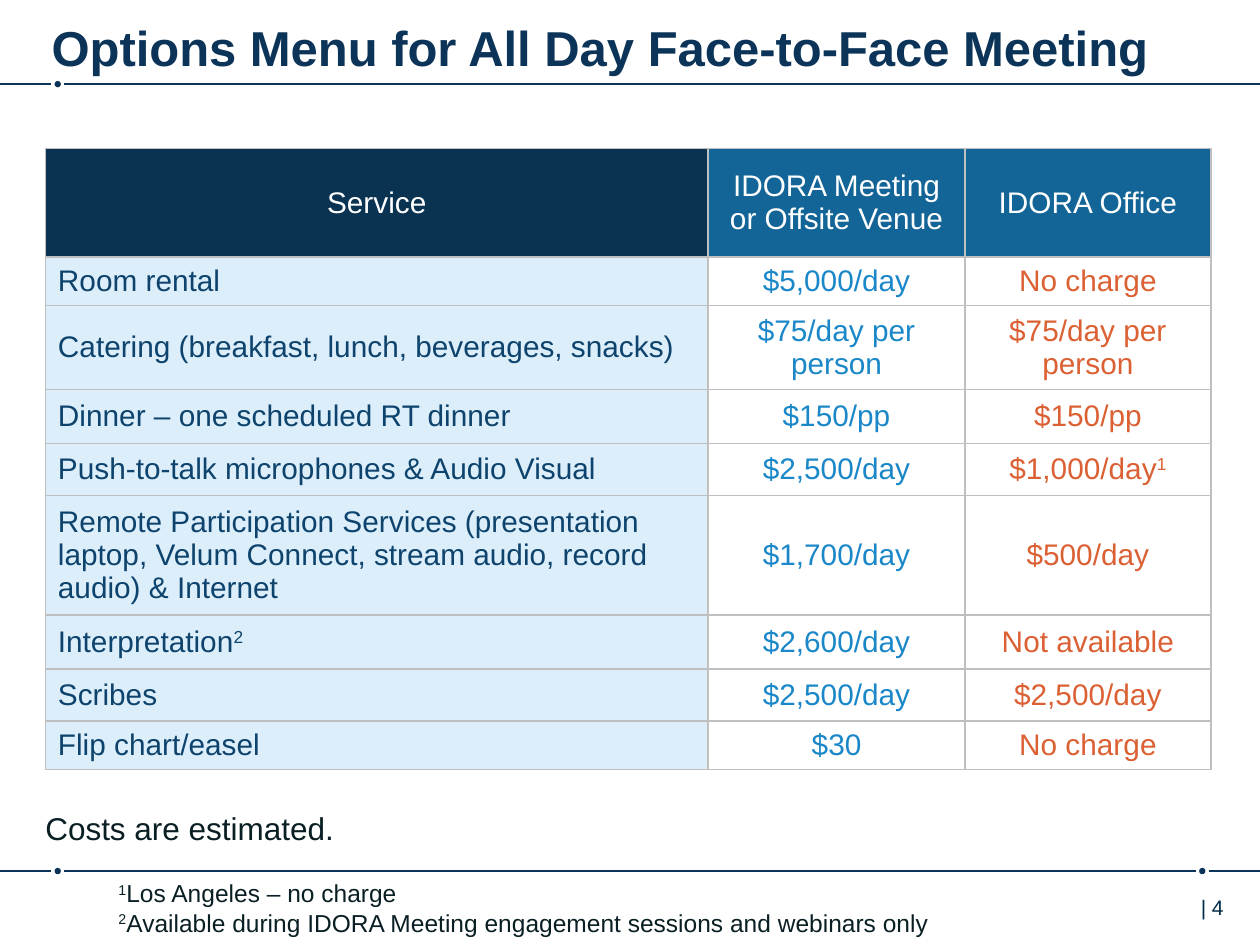
from dataclasses import dataclass

from lxml import etree
from pptx import Presentation, util as u
from pptx.dml.color import RGBColor
from pptx.enum import shapes, text
from pptx.oxml.ns import qn

COLUMNS, ROWS = 100, 75  # slide grid


@dataclass(frozen=True)
class Theme:
    font: str = "Arial"
    navy: str = "0C3458"
    ink: str = "0A1F24"
    number: str = "002B49"
    white: str = "FFFFFF"
    border: str = "BFBFBF"
    header_fills: tuple = ("0A3251", "136597", "136597")
    body_fills: tuple = ("CDE8F9", "FFFFFF", "FFFFFF")
    body_colours: tuple = ("0D436C", "1A87C9", "DB6033")
    body_opacity: int = 70
    title_size: int = 28
    note_size: int = 18
    table_size: int = 17
    footnote_size: int = 14
    number_size: int = 12


@dataclass(frozen=True)
class Area:
    column: float
    row: float
    columns: float
    rows: float


@dataclass(frozen=True)
class Rule:
    row: float
    dots: tuple  # centre columns of the dots that break the rule


@dataclass(frozen=True)
class Service:
    rows: float
    name: str
    venue: str
    office: str


THEME = Theme()
DOT, GAP = 0.5, 0.5  # dot diameter and clear space either side of its centre

RULES = (Rule(6.68, (4.58,)), Rule(69.13, (4.58, 95.42)))

# Text between a pair of carets is superscript
TABLE_AREA = Area(3.6, 11.8, 92.5, 48.5)
TABLE_COLUMNS = (52.6, 20.4, 19.5)
TABLE = (
    Service(8.6, "Service", "IDORA Meeting or Offsite Venue", "IDORA Office"),
    Service(3.65, "Room rental", "$5,000/day", "No charge"),
    Service(6.35, "Catering (breakfast, lunch, beverages, snacks)",
            "$75/day per person", "$75/day per person"),
    Service(4.3, "Dinner – one scheduled RT dinner", "$150/pp", "$150/pp"),
    Service(4.1, "Push-to-talk microphones & Audio Visual",
            "$2,500/day", "$1,000/day^1^"),
    Service(9.5, "Remote Participation Services (presentation laptop, "
            "Velum Connect, stream audio, record audio) & Internet",
            "$1,700/day", "$500/day"),
    Service(4.3, "Interpretation^2^", "$2,600/day", "Not available"),
    Service(4.1, "Scribes", "$2,500/day", "$2,500/day"),
    Service(3.65, "Flip chart/easel", "$30", "No charge"),
)
FOOTNOTES = (
    "^1^Los Angeles – no charge",
    "^2^Available during IDORA Meeting engagement sessions and webinars only",
)

deck = Presentation()
deck.slide_width, deck.slide_height = u.Inches(10), u.Inches(7.5)


def across(columns: float) -> int:
    return round(deck.slide_width * columns / COLUMNS)


def down(rows: float) -> int:
    return round(deck.slide_height * rows / ROWS)


def place(area: Area) -> tuple:
    return (across(area.column), down(area.row),
            across(area.columns), down(area.rows))


def write(para, content: str, size: float, colour: str, bold: bool = False) -> None:
    for index, piece in enumerate(content.split("^")):
        if not piece:
            continue
        span = para.add_run()
        span.text = piece
        span.font.name, span.font.size = THEME.font, u.Pt(size)
        span.font.bold = bold
        span.font.color.rgb = RGBColor.from_string(colour)
        if index % 2:
            span._r.get_or_add_rPr().set("baseline", "30000")


def set_margins(frame, left: float, top: float) -> None:
    frame.margin_left, frame.margin_right = across(left), 0
    frame.margin_top = frame.margin_bottom = down(top)


def draw_text(page, area: Area, lines: tuple, size: float, colour: str,
              left: float = 0, top: float = 0) -> None:
    frame = page.shapes.add_textbox(*place(area)).text_frame
    frame.word_wrap = True
    set_margins(frame, left, top)
    for index, line in enumerate(lines):
        para = frame.add_paragraph() if index else frame.paragraphs[0]
        write(para, line, size, colour)


def draw_rule(page, rule: Rule) -> None:
    navy = RGBColor.from_string(THEME.navy)
    edges = [0]
    for centre in rule.dots:
        edges += [centre - GAP, centre + GAP]
        dot = page.shapes.add_shape(
            shapes.MSO_SHAPE.OVAL,
            *place(Area(centre - DOT / 2, rule.row - DOT / 2, DOT, DOT)))
        dot.shadow.inherit = False
        dot.fill.solid()
        dot.fill.fore_color.rgb = navy
        dot.line.fill.background()
    edges.append(COLUMNS)
    for start, end in zip(edges[::2], edges[1::2]):
        line = page.shapes.add_connector(
            shapes.MSO_CONNECTOR.STRAIGHT, across(start), down(rule.row),
            across(end), down(rule.row))
        line.line.color.rgb, line.line.width = navy, u.Pt(1)
        etree.SubElement(line._element.spPr, qn("a:effectLst"))


def style_cell(cell, fill: str, opacity: int) -> None:
    properties = cell._tc.get_or_add_tcPr()
    for side in ("a:lnL", "a:lnR", "a:lnT", "a:lnB"):
        edge = etree.SubElement(properties, qn(side), w=str(u.Pt(1)))
        paint = etree.SubElement(edge, qn("a:solidFill"))
        etree.SubElement(paint, qn("a:srgbClr"), val=THEME.border)
    cell.fill.solid()
    cell.fill.fore_color.rgb = RGBColor.from_string(fill)
    if opacity < 100:
        colour = properties.find(qn("a:solidFill")).find(qn("a:srgbClr"))
        etree.SubElement(colour, qn("a:alpha"), val=str(opacity * 1000))


def draw_table(page) -> None:
    grid = page.shapes.add_table(
        len(TABLE), len(TABLE_COLUMNS), *place(TABLE_AREA)).table
    grid.first_row = grid.horz_banding = False
    for column, width in zip(grid.columns, TABLE_COLUMNS):
        column.width = across(width)
    for row, service in enumerate(TABLE):
        grid.rows[row].height = down(service.rows)
        header = row == 0
        for column, content in enumerate((service.name, service.venue, service.office)):
            cell = grid.cell(row, column)
            fills = THEME.header_fills if header else THEME.body_fills
            style_cell(cell, fills[column], 100 if header else THEME.body_opacity)
            cell.vertical_anchor = text.MSO_ANCHOR.MIDDLE
            para = cell.text_frame.paragraphs[0]
            centred = header or column > 0
            para.alignment = text.PP_ALIGN.CENTER if centred else text.PP_ALIGN.LEFT
            write(para, content, THEME.table_size,
                  THEME.white if header else THEME.body_colours[column])


def draw_title(page, content: str) -> None:
    box = page.shapes.title
    box.left, box.top, box.width, box.height = place(Area(4.1, 0.9, 92.1, 4.9))
    frame = box.text_frame
    frame.auto_size = text.MSO_AUTO_SIZE.NONE
    frame.vertical_anchor = text.MSO_ANCHOR.TOP
    set_margins(frame, 0, 0.5)
    para = frame.paragraphs[0]
    para.alignment = text.PP_ALIGN.LEFT
    write(para, content, THEME.title_size, THEME.navy, bold=True)


def main() -> None:
    page = deck.slides.add_slide(deck.slide_layouts[5])
    # Frame: rules and page number
    for rule in RULES:
        draw_rule(page, rule)
    draw_text(page, Area(92.9, 70.5, 8.7, 4), ("| 4",), THEME.number_size,
              THEME.number, left=2.4, top=0.5)
    # Content: title, price table and notes
    draw_title(page, "Options Menu for All Day Face-to-Face Meeting")
    draw_table(page)
    draw_text(page, Area(9.4, 69.7, 66.3, 4.7), FOOTNOTES,
              THEME.footnote_size, THEME.ink)
    draw_text(page, Area(3.6, 64.2, 46.4, 3), ("Costs are estimated.",),
              THEME.note_size, THEME.ink)
    deck.save("out.pptx")


if __name__ == "__main__":
    main()
